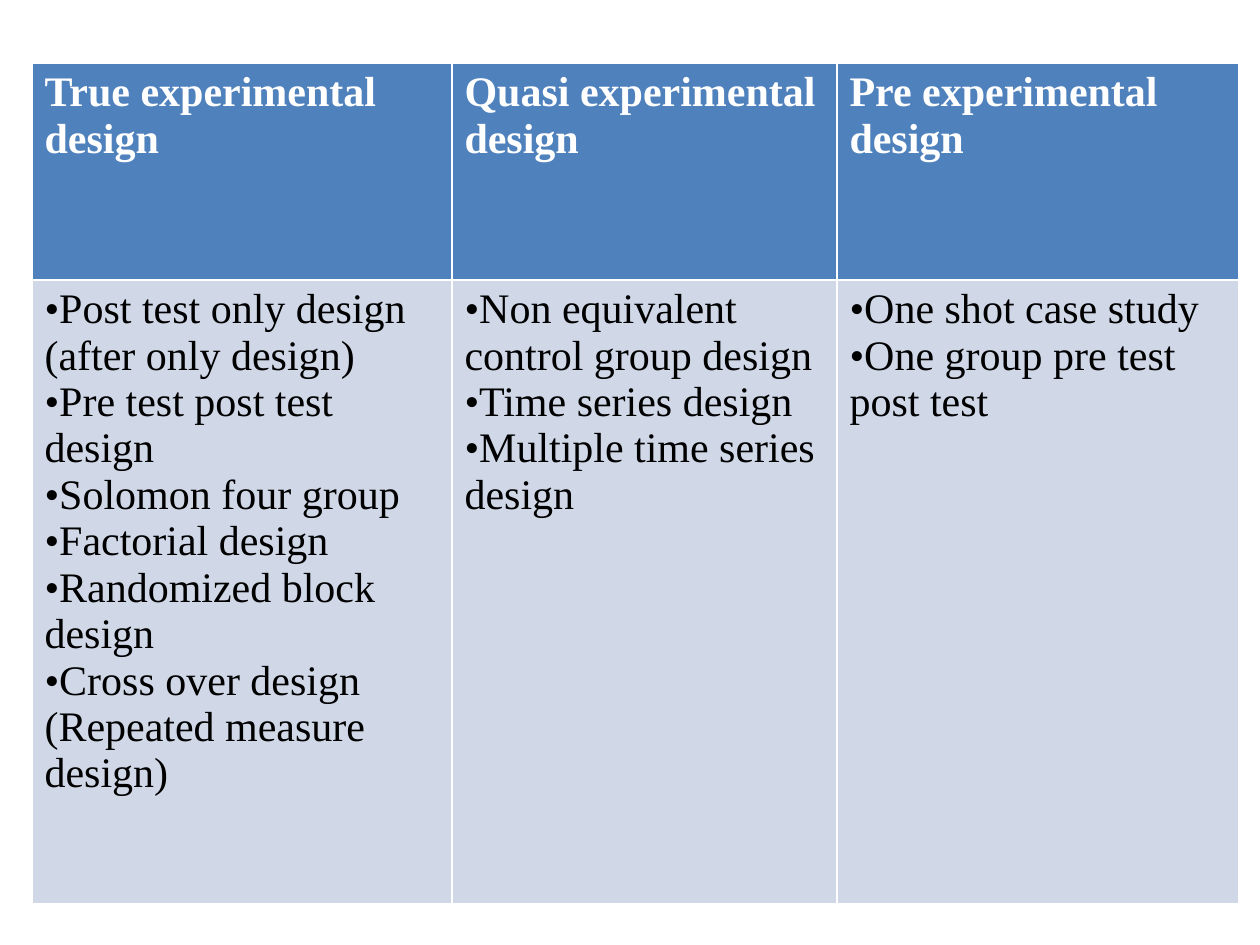
"""Build a slide with a table that compares three kinds of experimental design."""
from lxml.etree import SubElement
from pptx import Presentation
from pptx.dml.color import RGBColor
from pptx.oxml.ns import qn
from pptx.util import Pt

SCALE = 914400 / 126
WHITE = RGBColor(0xFF, 0xFF, 0xFF)
BLACK = RGBColor(0x00, 0x00, 0x00)
BLUE = RGBColor(0x4F, 0x81, 0xBD)
PALE = RGBColor(0xD0, 0xD8, 0xE8)

DESIGNS = {
    "True experimental design": [
        "Post test only design (after only design)",
        "Pre test post test design",
        "Solomon four group",
        "Factorial design",
        "Randomized block design",
        "Cross over design (Repeated measure design)",
    ],
    "Quasi experimental design": [
        "Non equivalent control group design",
        "Time series design",
        "Multiple time series design",
    ],
    "Pre experimental design": [
        "One shot case study",
        "One group pre test post test",
    ],
}


def px(count):
    return round(count * SCALE)


class Board:
    def __init__(self, slide):
        self.slide = slide
        self.style = {"name": "Times New Roman", "size": Pt(24)}

    def table(self, left, top, widths, heights):
        box = (px(n) for n in (left, top, sum(widths), sum(heights)))
        grid = self.slide.shapes.add_table(len(heights), len(widths), *box).table
        for col, width in zip(grid.columns, widths):
            col.width = px(width)
        for row, height in zip(grid.rows, heights):
            row.height = px(height)
        return grid

    def cell(self, cell, lines, fill, color, bold=False, bullet=None):
        cell.fill.solid()
        cell.fill.fore_color.rgb = fill
        cell.text = "\n".join(lines)
        for para in cell.text_frame.paragraphs:
            font = para.runs[0].font
            for key, value in {**self.style, "bold": bold}.items():
                setattr(font, key, value)
            font.color.rgb = color
            if bullet:
                self.bullet(para, bullet)

    def bullet(self, para, mark):
        props = para._p.get_or_add_pPr()
        for key in ("marL", "indent"):
            props.set(key, "0")
        SubElement(props, qn("a:buFont"), typeface=self.style["name"])
        SubElement(props, qn("a:buChar"), char=mark)


def main():
    deck = Presentation()
    deck.slide_width, deck.slide_height = px(1260), px(945)
    board = Board(deck.slides.add_slide(deck.slide_layouts[6]))
    grid = board.table(32, 63, (420, 385, 402), (217, 624))
    for col, (head, items) in enumerate(DESIGNS.items()):
        board.cell(grid.cell(0, col), [head], BLUE, WHITE, bold=True)
        board.cell(grid.cell(1, col), items, PALE, BLACK, bullet="•")
    deck.save("out.pptx")


if __name__ == "__main__":
    main()
